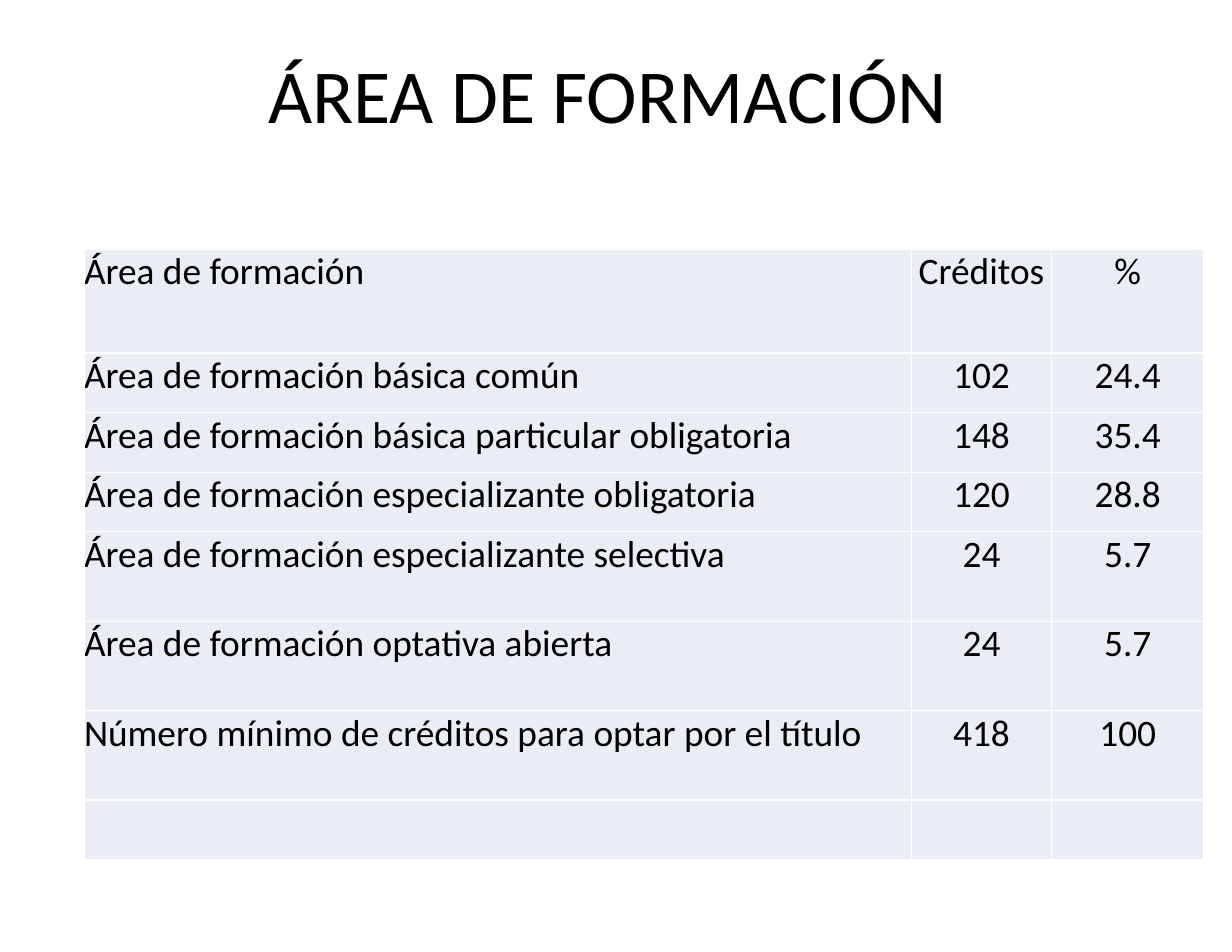
from lxml import etree
from pptx import Presentation
from pptx.dml.color import RGBColor
from pptx.enum.text import MSO_ANCHOR, PP_ALIGN
from pptx.oxml.ns import qn
from pptx.util import Pt

FONT = "Calibri"
INK, PAPER, CELL_FILL = "000000", "FFFFFF", "E9EDF4"

COLUMN_WIDTHS = (532, 90, 98)
HEADER, SINGLE, TALL = 67, 38.3, 57.5
AREAS = [
    (HEADER, "Área de formación", "Créditos", "%"),
    (SINGLE, "Área de formación básica común", "102", "24.4"),
    (SINGLE, "Área de formación básica particular obligatoria", "148", "35.4"),
    (SINGLE, "Área de formación especializante obligatoria", "120", "28.8"),
    (TALL, "Área de formación especializante selectiva", "24", "5.7"),
    (TALL, "Área de formación optativa abierta", "24", "5.7"),
    (TALL, "Número mínimo de créditos para optar por el título", "418", "100"),
    (SINGLE, "", "", ""),
]


def color(hex_code):
    return RGBColor.from_string(hex_code)


def write(frame, text, size, align=PP_ALIGN.LEFT, ink=INK):
    paragraph = frame.paragraphs[0]
    paragraph.alignment = align
    paragraph.font.size = Pt(size)
    if text:
        run = paragraph.add_run()
        run.text = text
        run.font.name = FONT
        run.font.size = Pt(size)
        run.font.color.rgb = color(ink)


def set_margins(target, horizontal, vertical):
    target.margin_left = target.margin_right = Pt(horizontal)
    target.margin_top = target.margin_bottom = Pt(vertical)


def set_borders(cell, hex_code, width):
    properties = cell._tc.get_or_add_tcPr()
    for position, side in enumerate(("lnL", "lnR", "lnT", "lnB")):
        line = etree.Element(qn(f"a:{side}"), w=str(Pt(width)))
        fill = etree.SubElement(line, qn("a:solidFill"))
        etree.SubElement(fill, qn("a:srgbClr"), val=hex_code)
        properties.insert(position, line)


def add_title(slide, left, top, width, height):
    title = slide.shapes.add_textbox(Pt(left), Pt(top), Pt(width), Pt(height))
    frame = title.text_frame
    frame.word_wrap = True
    frame.vertical_anchor = MSO_ANCHOR.TOP
    set_margins(frame, 8, 6)
    write(frame, "ÁREA DE FORMACIÓN ", size=49, align=PP_ALIGN.CENTER)


def add_credits_table(slide, left, top):
    heights = [height for height, *_ in AREAS]
    table = slide.shapes.add_table(
        len(AREAS), len(COLUMN_WIDTHS), Pt(left), Pt(top),
        Pt(sum(COLUMN_WIDTHS)), Pt(sum(heights))).table
    table.first_row = table.horz_banding = False
    for column, width in zip(table.columns, COLUMN_WIDTHS):
        column.width = Pt(width)
    for row, (height, *values) in zip(table.rows, AREAS):
        row.height = Pt(height)
        for index, (cell, value) in enumerate(zip(row.cells, values)):
            set_margins(cell, 0, 0)
            cell.fill.solid()
            cell.fill.fore_color.rgb = color(CELL_FILL)
            set_borders(cell, PAPER, 1)
            write(cell.text_frame, value, size=24,
                  align=PP_ALIGN.CENTER if index else PP_ALIGN.LEFT)


def main():
    deck = Presentation()
    deck.slide_width, deck.slide_height = Pt(792), Pt(612)
    slide = deck.slides.add_slide(deck.slide_layouts[6])
    slide.background.fill.solid()
    slide.background.fill.fore_color.rgb = color(PAPER)
    add_title(slide, 39.6, 24.5, 712.8, 102)
    add_credits_table(slide, 54, 160)
    deck.save("out.pptx")


if __name__ == "__main__":
    main()
